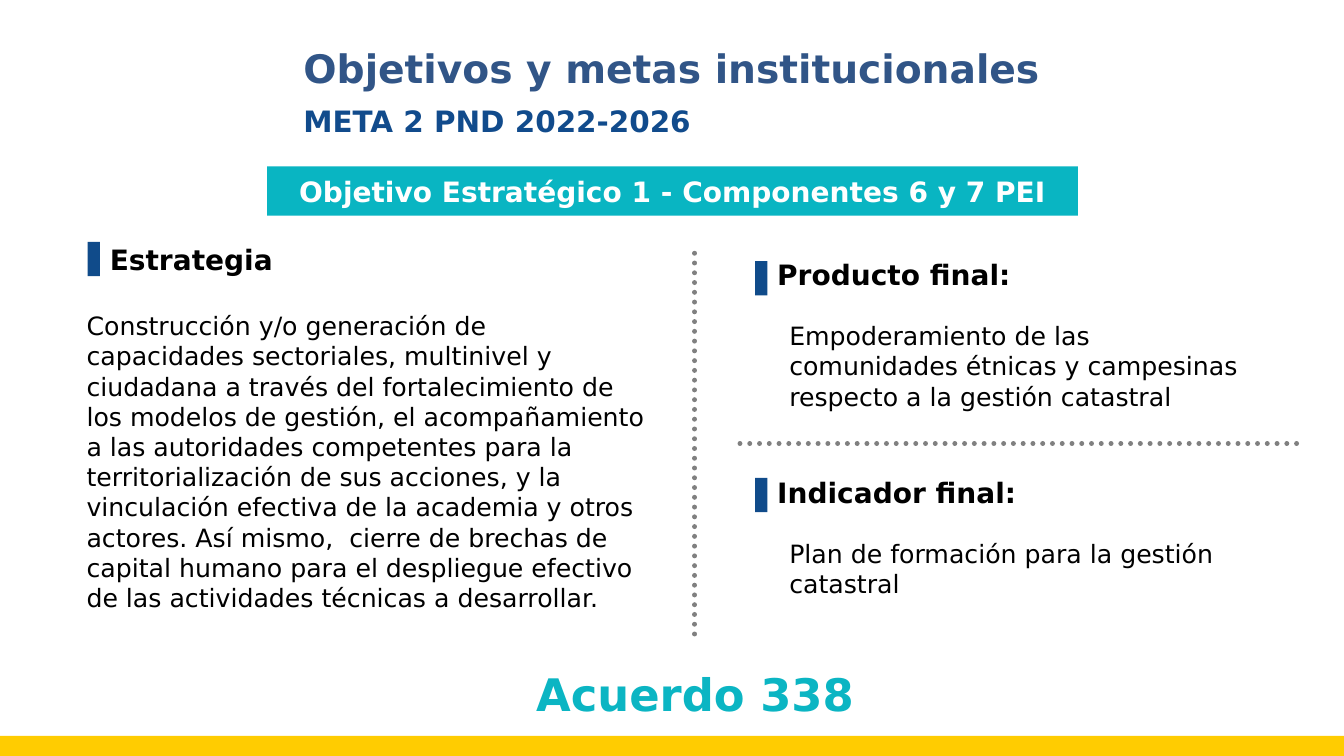
from lxml.etree import SubElement
from pptx import Presentation
from pptx.dml.color import RGBColor
from pptx.enum.dml import MSO_LINE
from pptx.enum.shapes import MSO_CONNECTOR, MSO_SHAPE
from pptx.enum.text import MSO_ANCHOR, PP_ALIGN
from pptx.oxml.ns import qn
from pptx.util import Inches, Pt

TEAL = "09B5C2"
NAVY = "104B8A"


def write(shape, text, size, color="000000", bold=True, align=PP_ALIGN.LEFT):
    frame = shape.text_frame
    frame.text = text
    frame.word_wrap = True
    frame.vertical_anchor = MSO_ANCHOR.TOP
    para = frame.paragraphs[0]
    para.alignment = align
    para.font.name = "DejaVu Sans"
    para.font.size = Pt(size)
    para.font.bold = bold
    para.font.color.rgb = RGBColor.from_string(color)


def block(left, top, width, height, color):
    """Add a plain filled rectangle."""
    shape = slide.shapes.add_shape(MSO_SHAPE.RECTANGLE, Inches(left), Inches(top),
                                   Inches(width), Inches(height))
    shape.shadow.inherit = False
    shape.fill.solid()
    shape.fill.fore_color.rgb = RGBColor.from_string(color)
    shape.line.fill.background()
    return shape


deck = Presentation()
deck.slide_width, deck.slide_height = Inches(13.33), Inches(7.5)
slide = deck.slides.add_slide(deck.slide_layouts[5])

block(0, 7.3, 13.33, 0.23, "FFCC01")

title = slide.shapes.title
title.left, title.top = Inches(2.91), Inches(0.39)
title.width, title.height = Inches(7.55), Inches(0.57)
write(title, "Objetivos y metas institucionales", 28, "315587")

banner = block(2.65, 1.65, 8.04, 0.49, TEAL)
write(banner, "Objetivo Estratégico 1 - Componentes 6 y 7 PEI", 20, "FFFFFF",
      align=PP_ALIGN.CENTER)
banner.text_frame.vertical_anchor = MSO_ANCHOR.MIDDLE

# Section markers
for left, top in [(0.87, 2.4), (7.49, 2.59), (7.49, 4.74)]:
    block(left, top, 0.12, 0.34, NAVY)

# Dotted dividers
for x1, y1, x2, y2 in [(6.89, 6.29, 6.89, 2.51), (12.86, 4.4, 7.28, 4.4)]:
    rule = slide.shapes.add_connector(MSO_CONNECTOR.STRAIGHT, Inches(x1), Inches(y1),
                                      Inches(x2), Inches(y2))
    rule.line.color.rgb = RGBColor.from_string("808080")
    rule.line.width = Pt(3.5)
    rule.line.dash_style = MSO_LINE.ROUND_DOT
    props = rule.element.spPr
    props.find(qn("a:ln")).set("cap", "rnd")
    SubElement(props, qn("a:effectLst"))

plan = (
    "Construcción y/o generación de capacidades sectoriales, multinivel y ciudadana "
    "a través del fortalecimiento de los modelos de gestión, el acompañamiento a las "
    "autoridades competentes para la territorialización de sus acciones, y la "
    "vinculación efectiva de la academia y otros actores. Así mismo,  cierre de "
    "brechas de capital humano para el despliegue efectivo de las actividades "
    "técnicas a desarrollar."
)
goal = "Empoderamiento de las comunidades étnicas y campesinas respecto a la gestión catastral"

# Left, top, width, height, text, size, colour, bold, alignment
texts = [
    (2.91, 0.97, 4.14, 0.45, "META 2 PND 2022-2026", 21, "114B8C"),
    (0.99, 2.36, 1.92, 0.44, "Estrategia", 20),
    (0.76, 3.03, 5.78, 3.13, plan, 18, "000000", False),
    (7.61, 2.51, 2.56, 0.44, "Producto final:", 20),
    (7.73, 3.13, 4.73, 1.01, goal, 18, "000000", False),
    (7.61, 4.67, 2.79, 0.44, "Indicador final:", 20),
    (7.73, 5.29, 4.73, 0.71, "Plan de formación para la gestión catastral", 18,
     "000000", False),
    (5.17, 6.57, 3.45, 0.64, "Acuerdo 338", 32, "0BB5C3", True, PP_ALIGN.CENTER),
]
for left, top, width, height, *style in texts:
    box = slide.shapes.add_textbox(Inches(left), Inches(top), Inches(width), Inches(height))
    write(box, *style)

deck.save("out.pptx")
